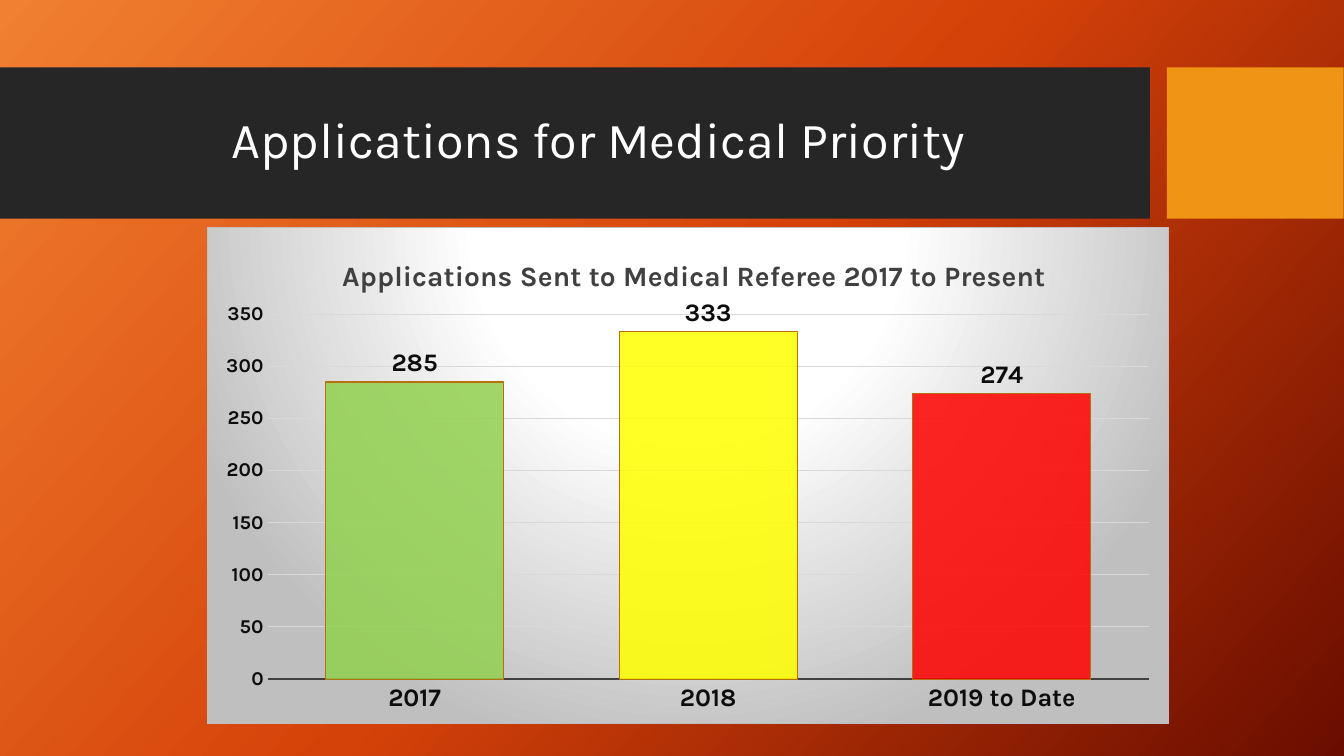
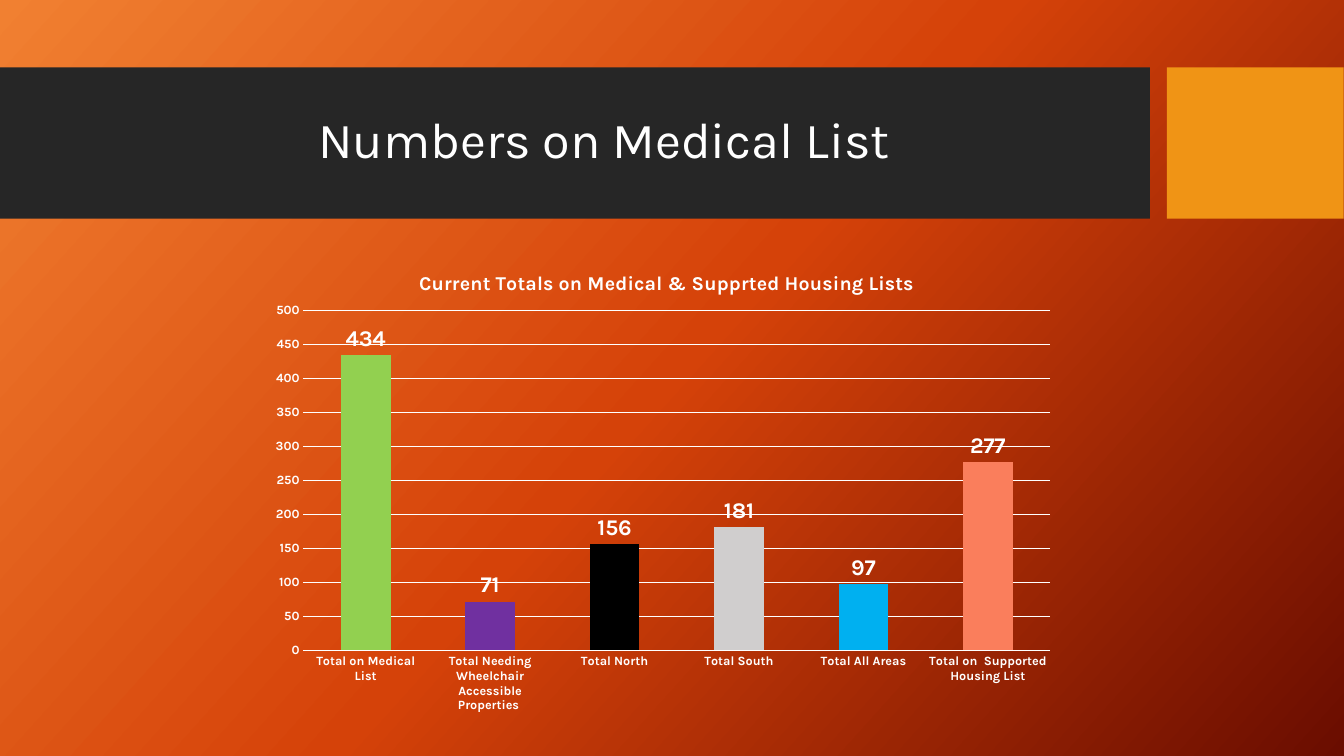
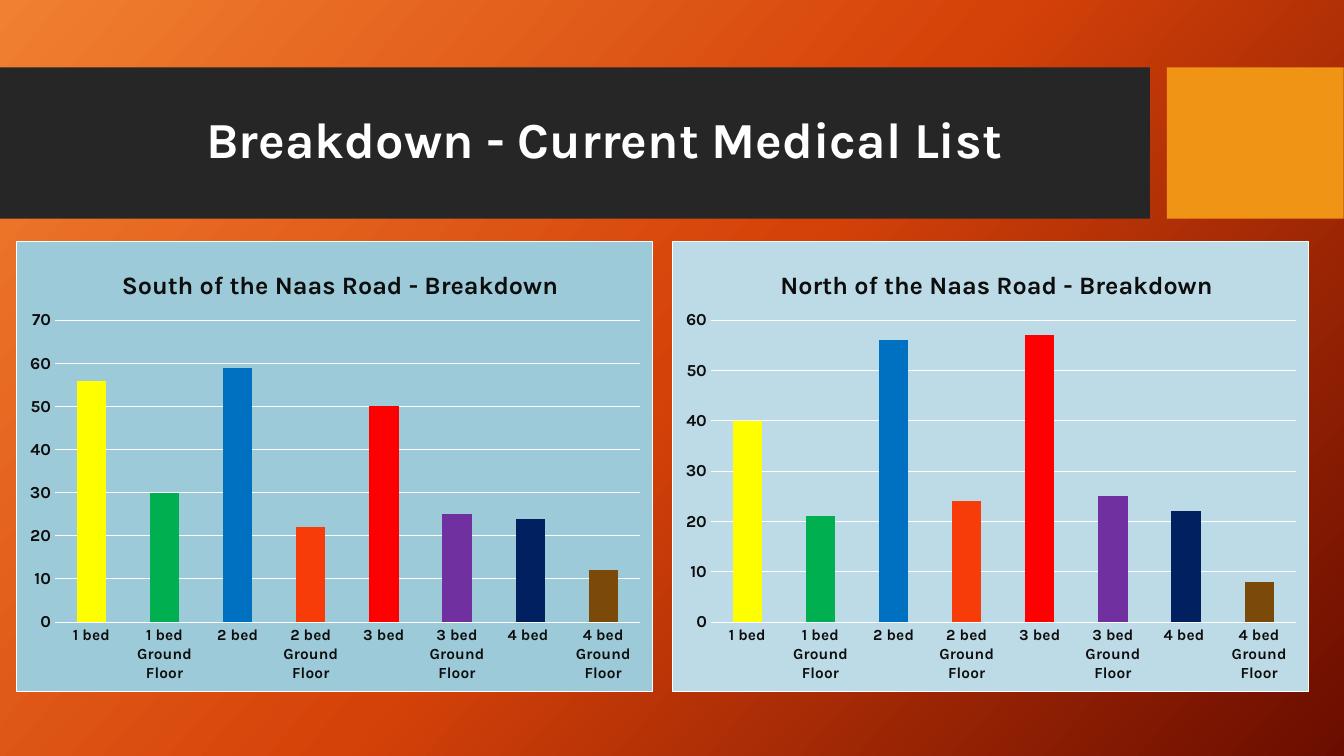
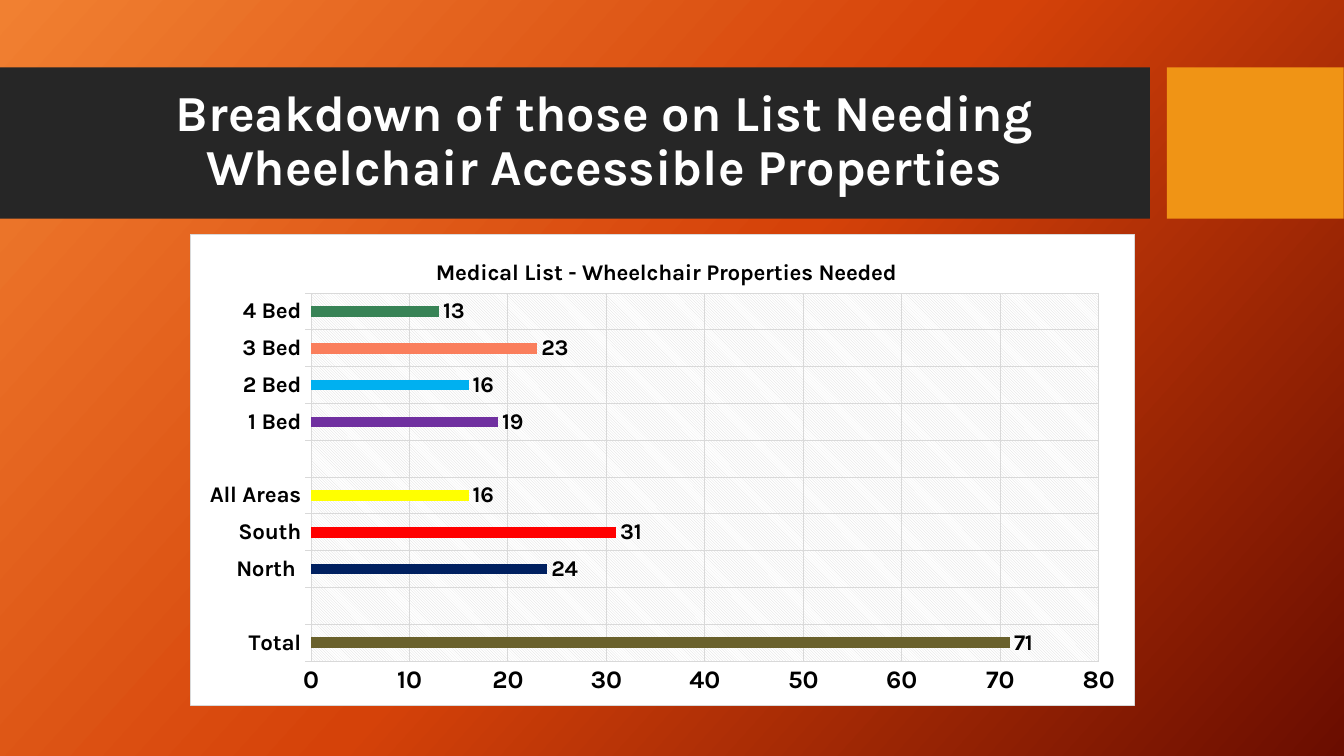
from lxml.etree import SubElement
from pptx import Presentation
from pptx.chart.data import CategoryChartData
from pptx.dml.color import RGBColor
from pptx.enum.chart import XL_CHART_TYPE as ChartType
from pptx.enum.chart import XL_LABEL_POSITION as LabelPosition
from pptx.enum.chart import XL_TICK_MARK as TickMark
from pptx.enum.shapes import MSO_SHAPE as Preset
from pptx.enum.text import MSO_ANCHOR as Anchor
from pptx.enum.text import PP_ALIGN as Align
from pptx.oxml import parse_xml
from pptx.oxml.ns import nsdecls, qn
from pptx.util import Cm, Pt

FONT = "Karla"
WHITE, INK, BLACK = "FFFFFF", "0D0D0D", "000000"
BAND, ACCENT, GREY = "262626", "F09415", "D9D9D9"
GREEN, YELLOW, RED = "92D050", "FFFF00", "FF0000"
PURPLE, NAVY, SKY, SALMON = "7030A0", "002060", "00B0F0", "FA7E5C"
BED_COLOURS = [YELLOW, "00B050", "0070C0", "F73C09", RED, PURPLE, NAVY, "7B4A08"]
BED_SIZES = ["1 bed", "1 bed Ground Floor", "2 bed", "2 bed Ground Floor",
             "3 bed", "3 bed Ground Floor", "4 bed ", "4 bed Ground Floor"]


def colour(code):
    return RGBColor.from_string(code)


def set_font(font, size, code, bold=True):
    font.name, font.size, font.bold = FONT, Pt(size), bold
    font.color.rgb = colour(code)


def set_line(line, code, width=0.75):
    """Colour a line, or hide it when there is no colour."""
    if code is None:
        line.fill.background()
    else:
        line.color.rgb = colour(code)
        line.width = Pt(width)


def solid(code):
    return f'<a:solidFill><a:srgbClr val="{code}"/></a:solidFill>'


def gradient(stops, direction):
    marks = "".join(f'<a:gs pos="{place * 1000}"><a:srgbClr val="{code}"/></a:gs>'
                    for place, code in stops)
    return f'<a:gradFill {nsdecls("a")}><a:gsLst>{marks}</a:gsLst>{direction}</a:gradFill>'


def hatch(front, back):
    return (f'<a:pattFill prst="ltDnDiag"><a:fgClr><a:srgbClr val="{front}"/></a:fgClr>'
            f'<a:bgClr><a:srgbClr val="{back}"/></a:bgClr></a:pattFill>')


def area_format(fill, border=None):
    """Build the fill and border of a chart or plot area."""
    line = solid(border) if border else "<a:noFill/>"
    return parse_xml(f'<c:spPr {nsdecls("c", "a")}>{fill}'
                     f'<a:ln w="9525">{line}</a:ln></c:spPr>')


def set_layout(parent, **percents):
    """Place a chart part by percentages of the chart's size."""
    for old in parent.findall(qn("c:layout")):
        parent.remove(old)
    target = '<c:layoutTarget val="inner"/>' if "w" in percents else ""
    modes = "".join(f'<c:{key}Mode val="edge"/>' for key in "xy")
    values = "".join(f'<c:{key} val="{value / 100:.3f}"/>' for key, value in percents.items())
    layout = parse_xml(f'<c:layout {nsdecls("c")}><c:manualLayout>{target}{modes}{values}'
                       '</c:manualLayout></c:layout>')
    parent.insert(0 if parent.find(qn("c:tx")) is None else 1, layout)


class ChartDeck:
    def __init__(self):
        self.deck = Presentation()
        self.deck.slide_width, self.deck.slide_height = Cm(33.87), Cm(19.05)
        master = self.deck.slide_master
        master.background.fill.solid()
        background = master.element.xpath("p:cSld/p:bg/p:bgPr")[0]
        background.replace(background[0], parse_xml(gradient(
            [(0, "F18031"), (50, "D54209"), (100, "6A0D00")],
            f'<a:lin ang="{42 * 60000}" scaled="0"/>')))
        self.page = None

    def band(self, left, width, code):
        box = self.page.shapes.add_shape(Preset.RECTANGLE, Cm(left), Cm(1.7), Cm(width), Cm(3.81))
        box.shadow.inherit = False
        box.fill.solid()
        box.fill.fore_color.rgb = colour(code)
        box.line.fill.background()

    def new_page(self, title, bold=False):
        self.page = self.deck.slides.add_slide(self.deck.slide_layouts[6])
        self.band(0, 28.98, BAND)
        self.band(29.41, 4.45, ACCENT)
        frame = self.page.shapes.add_textbox(Cm(1.88), Cm(2.08), Cm(26.7), Cm(3)).text_frame
        frame.word_wrap = True
        frame.vertical_anchor = Anchor.MIDDLE
        para = frame.paragraphs[0]
        para.text = title
        para.alignment = Align.CENTER
        para.line_spacing = 0.9
        set_font(para.font, 36, WHITE, bold)

    def chart(self, at, names, values, colours, kind=ChartType.COLUMN_CLUSTERED,
              gap=150, fill="<a:noFill/>", border=None, plot=None):
        """Add a one-series chart; plot holds left, top, width, height in percent."""
        data = CategoryChartData()
        data.categories = names
        data.add_series("Series 1", values)
        chart = self.page.shapes.add_chart(kind, *map(Cm, at), data).chart
        set_font(chart.font, 10, WHITE, False)
        chart.has_legend = False
        chart._chartSpace.chart.addnext(area_format(fill, border))
        set_layout(chart._chartSpace.chart.plotArea, **dict(zip("xywh", plot)))
        bars = chart.plots[0]
        bars.gap_width = gap
        bars.vary_by_categories = False
        series = bars.series[0]
        series.format.fill.solid()
        series.format.fill.fore_color.rgb = colour(ACCENT)
        for index, code in enumerate(colours):
            if code:
                point = series.points[index].format.fill
                point.solid()
                point.fore_color.rgb = colour(code)
        return chart

    def chart_title(self, chart, text, size, code, left, top):
        para = chart.chart_title.text_frame.paragraphs[0]
        para.text = text
        set_font(para.font, size, code)
        chart.chart_title.include_in_layout = False
        set_layout(chart.chart_title._element, x=left, y=top)

    def axes(self, chart, name_size, value_size, code, top, step, grid=GREY):
        for axis, size in ((chart.category_axis, name_size), (chart.value_axis, value_size)):
            axis.major_tick_mark = axis.minor_tick_mark = TickMark.NONE
            set_font(axis.tick_labels.font, size, code)
            set_line(axis.format.line, None)
        axis = chart.value_axis
        axis.minimum_scale, axis.maximum_scale, axis.major_unit = 0, top, step
        set_line(axis.major_gridlines.format.line, grid)

    def value_labels(self, chart, size, code):
        bars = chart.plots[0]
        bars.has_data_labels = True
        labels = bars.data_labels
        labels.show_value = True
        labels.position = LabelPosition.OUTSIDE_END
        set_font(labels.font, size, code)

    def outline_bars(self, chart, code, opacity):
        series = chart.plots[0].series[0]
        for index in range(len(series.values)):
            set_line(series.points[index].format.line, code)
        for shade in series._element.xpath("c:dPt/c:spPr/a:solidFill/a:srgbClr"):
            SubElement(shade, qn("a:alpha"), val=str(opacity * 1000))


def applications(show):
    show.new_page("Applications for Medical Priority ")
    glow = gradient([(0, WHITE), (39, WHITE), (100, "BFBFBF")],
                    '<a:path path="circle"><a:fillToRect l="50000" t="-80000" '
                    'r="50000" b="180000"/></a:path>')
    chart = show.chart((5.21, 5.72, 24.26, 12.52), ["2017", "2018", "2019 to Date"],
                       [285, 333, 274], [GREEN, YELLOW, RED], gap=65, fill=glow,
                       border="BFBFBF", plot=(6.3, 17.5, 91.6, 73.6))
    show.chart_title(chart, "Applications Sent to Medical Referee 2017 to Present",
                     20, "404040", 13.5, 4.9)
    show.axes(chart, 18, 14, INK, 350, 50)
    set_line(chart.category_axis.format.line, "404040", 1.5)
    show.value_labels(chart, 18, INK)
    show.outline_bars(chart, "B8700C", 85)


def list_totals(show):
    show.new_page("Numbers on Medical List")
    names = ["Total on Medical List", "Total Needing Wheelchair Accessible Properties ",
             "Total North", "Total South", "Total All Areas", "Total on  Supported Housing List"]
    chart = show.chart((6.53, 6.22, 20.32, 12.01), names, [434, 71, 156, 181, 97, 277],
                       [GREEN, PURPLE, BLACK, "D0CECE", SKY, SALMON],
                       plot=(5.5, 13.4, 92.6, 71.3))
    show.chart_title(chart, "Current Totals on Medical & Supprted Housing Lists",
                     14, WHITE, 19.4, 4.1)
    show.axes(chart, 9, 9, WHITE, 500, 50, WHITE)
    show.value_labels(chart, 16, WHITE)


def bed_breakdown(show):
    show.new_page("Breakdown - Current Medical List", bold=True)
    sides = [("South", 0.41, "9CCAD9", [56, 30, 59, 22, 50, 25, 24, 12], 70, 15.8),
             ("North", 16.94, "BDDBE6", [40, 21, 56, 24, 57, 25, 22, 8], 60, 16.2)]
    for side, left, back, values, top, title_left in sides:
        chart = show.chart((left, 6.07, 16.05, 11.38), BED_SIZES, values, BED_COLOURS,
                           fill=solid(back), border=WHITE, plot=(6, 17.5, 92, 67))
        show.chart_title(chart, f"{side} of the Naas Road - Breakdown", 18, INK, title_left, 4.9)
        show.axes(chart, 11, 12, INK, top, 10, WHITE)


def wheelchair_breakdown(show):
    show.new_page("Breakdown of those on List Needing Wheelchair Accessible Properties", bold=True)
    names = ["Total", "", "North ", "South", "All Areas", "", "1 Bed", "2 Bed", "3 Bed", "4 Bed"]
    chart = show.chart((4.78, 5.89, 23.83, 11.89), names,
                       [71, None, 24, 31, 16, None, 19, 16, 23, 13],
                       ["6A612C", None, NAVY, RED, YELLOW, None, PURPLE, SKY, SALMON, "388356"],
                       kind=ChartType.BAR_CLUSTERED, gap=247, fill=solid(WHITE), border=GREY,
                       plot=(12.8, 12.5, 83.4, 78.2))
    chart._chartSpace.chart.plotArea.append(area_format(hatch(GREY, WHITE)))
    show.chart_title(chart, "Medical List - Wheelchair Properties Needed", 16, BLACK, 25.6, 4.2)
    show.axes(chart, 16, 18, BLACK, 80, 10)
    axis = chart.category_axis
    axis.major_tick_mark = TickMark.OUTSIDE
    set_line(axis.format.line, GREY)
    set_line(axis.major_gridlines.format.line, GREY)
    show.value_labels(chart, 16, BLACK)


def main():
    show = ChartDeck()
    for build in (applications, list_totals, bed_breakdown, wheelchair_breakdown):
        build(show)
    show.deck.save("out.pptx")


if __name__ == "__main__":
    main()
